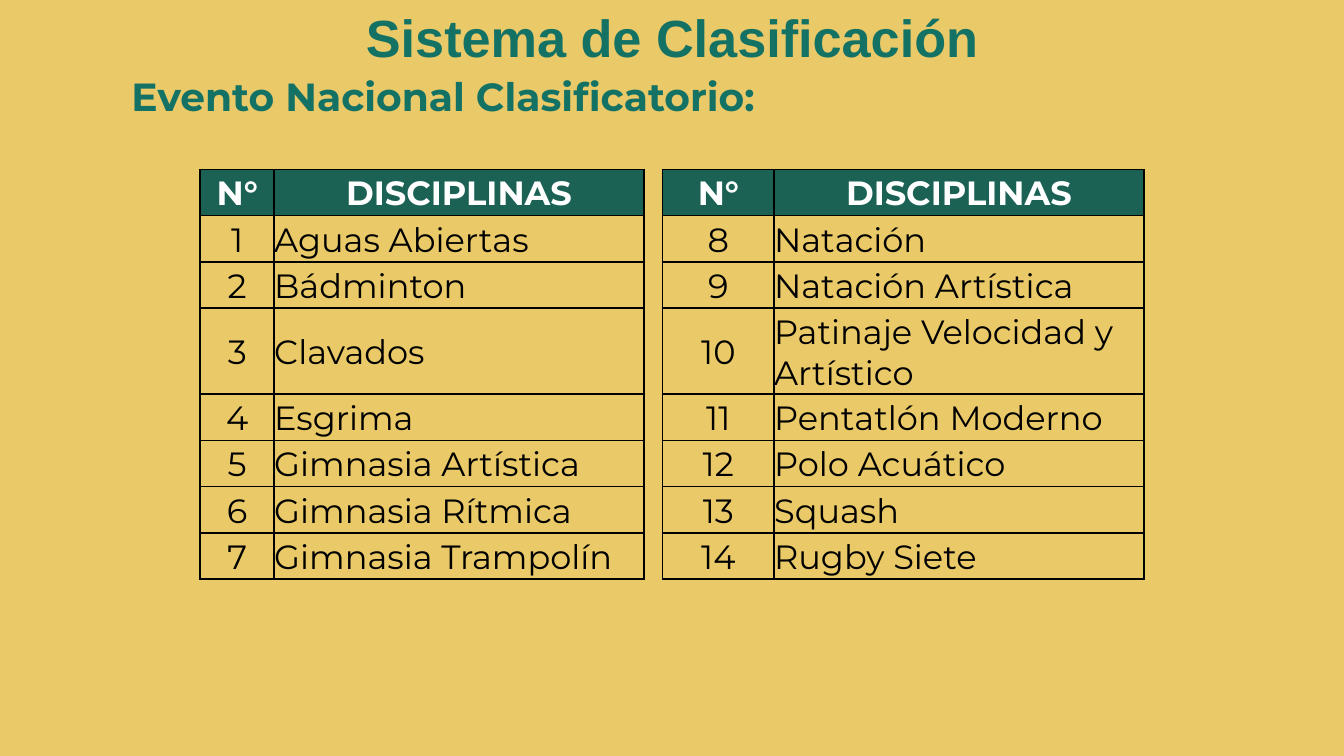
from pptx import Presentation
from pptx.dml.color import RGBColor
from pptx.enum.text import MSO_ANCHOR, MSO_AUTO_SIZE, PP_ALIGN
from pptx.oxml import parse_xml
from pptx.oxml.ns import nsdecls
from pptx.util import Inches, Pt

COLORS = {
    "background": "EAC968",
    "heading": "147265",
    "header": "1B6255",
    "white": "FFFFFF",
    "black": "000000",
}
DISCIPLINES = [
    "Aguas Abiertas", "Bádminton", "Clavados", "Esgrima",
    "Gimnasia Artística", "Gimnasia Rítmica", "Gimnasia Trampolín",
    "Natación", "Natación Artística", "Patinaje Velocidad y Artístico",
    "Pentatlón Moderno", "Polo Acuático", "Squash", "Rugby Siete",
]
COLUMN_WIDTHS = [0.55, 2.75, 0.14, 0.83, 2.75]
GAP_COLUMN = 2
TABLE_WIDTH, TABLE_HEIGHT = 7.01, 3.05
TALL_ROW, TALL_ROW_HEIGHT = 3, 0.64


def color(name):
    return RGBColor.from_string(COLORS[name])


def write(frame, text, size, font, color_name, bold, align):
    para = frame.paragraphs[0]
    para.text = text
    para.alignment = align
    for span in para.runs:
        span.font.size = Pt(size)
        span.font.name = font
        span.font.bold = bold
        span.font.color.rgb = color(color_name)


def place(box, left, top, width, height):
    box.left, box.top = Inches(left), Inches(top)
    box.width, box.height = Inches(width), Inches(height)


def add_title(page, text):
    title = page.shapes.title
    place(title, 0, 0.1, 10, 0.35)
    frame = title.text_frame
    frame.auto_size = MSO_AUTO_SIZE.NONE
    frame.vertical_anchor = MSO_ANCHOR.MIDDLE
    frame.margin_left = frame.margin_right = Inches(0.07)
    frame.margin_top = frame.margin_bottom = Inches(0.04)
    write(frame, text, 28, "Arial", "heading", True, PP_ALIGN.CENTER)


def add_subtitle(page, text):
    box = page.shapes.add_textbox(Inches(0.88), Inches(0.49), Inches(8.99), Inches(0.45))
    frame = box.text_frame
    frame.word_wrap = True
    frame.auto_size = MSO_AUTO_SIZE.SHAPE_TO_FIT_TEXT
    write(frame, text, 21, "Montserrat", "heading", True, PP_ALIGN.JUSTIFY)


def set_borders(cell, visible):
    properties = cell._tc.get_or_add_tcPr()
    for index, side in enumerate("LRTB"):
        paint = "<a:noFill/>"
        if side in visible:
            paint = f'<a:solidFill><a:srgbClr val="{COLORS["black"]}"/></a:solidFill>'
        line = parse_xml(f'<a:ln{side} {nsdecls("a")} w="{Pt(1)}">{paint}</a:ln{side}>')
        properties.insert(index, line)


def format_cell(cell, text, is_header, is_gap, align):
    cell.vertical_anchor = MSO_ANCHOR.MIDDLE
    cell.margin_left = cell.margin_right = 0
    cell.margin_top, cell.margin_bottom = Inches(0.03), Inches(0.01)
    if is_header and not is_gap:
        cell.fill.solid()
        cell.fill.fore_color.rgb = color("header")
    else:
        cell.fill.background()
    set_borders(cell, "LR" if is_gap else "LRTB")
    if not is_gap:
        text_color = "white" if is_header else "black"
        write(cell.text_frame, text, 18, "Montserrat", text_color, is_header, align)


def add_disciplines_table(page):
    # Two numbered halves side by side, with a narrow gap column between them
    half = len(DISCIPLINES) // 2
    rows = [["N°", "DISCIPLINAS", "", "N°", "DISCIPLINAS"]]
    for index in range(half):
        rows.append([str(index + 1), DISCIPLINES[index], "",
                     str(index + 1 + half), DISCIPLINES[index + half]])

    table = page.shapes.add_table(
        len(rows), len(COLUMN_WIDTHS), Inches(1.49), Inches(1.26),
        Inches(TABLE_WIDTH), Inches(TABLE_HEIGHT)).table
    table.first_row = table.horz_banding = False
    for column, width in zip(table.columns, COLUMN_WIDTHS):
        column.width = Inches(width)

    row_height = (TABLE_HEIGHT - TALL_ROW_HEIGHT) / (len(rows) - 1)
    for row_index, values in enumerate(rows):
        height = TALL_ROW_HEIGHT if row_index == TALL_ROW else row_height
        table.rows[row_index].height = Inches(height)
        is_header = row_index == 0
        for column_index, text in enumerate(values):
            is_name = not is_header and column_index in (1, 4)
            format_cell(table.cell(row_index, column_index), text, is_header,
                        column_index == GAP_COLUMN,
                        PP_ALIGN.LEFT if is_name else PP_ALIGN.CENTER)


def main():
    deck = Presentation()
    # Widescreen 16:9
    deck.slide_width = Inches(10)
    deck.slide_height = deck.slide_width * 9 // 16
    page = deck.slides.add_slide(deck.slide_layouts[5])
    page.background.fill.solid()
    page.background.fill.fore_color.rgb = color("background")

    # Headings
    add_title(page, "Sistema de Clasificación")
    add_subtitle(page, "Evento Nacional Clasificatorio:")

    # Disciplines
    add_disciplines_table(page)
    deck.save("out.pptx")


if __name__ == "__main__":
    main()
